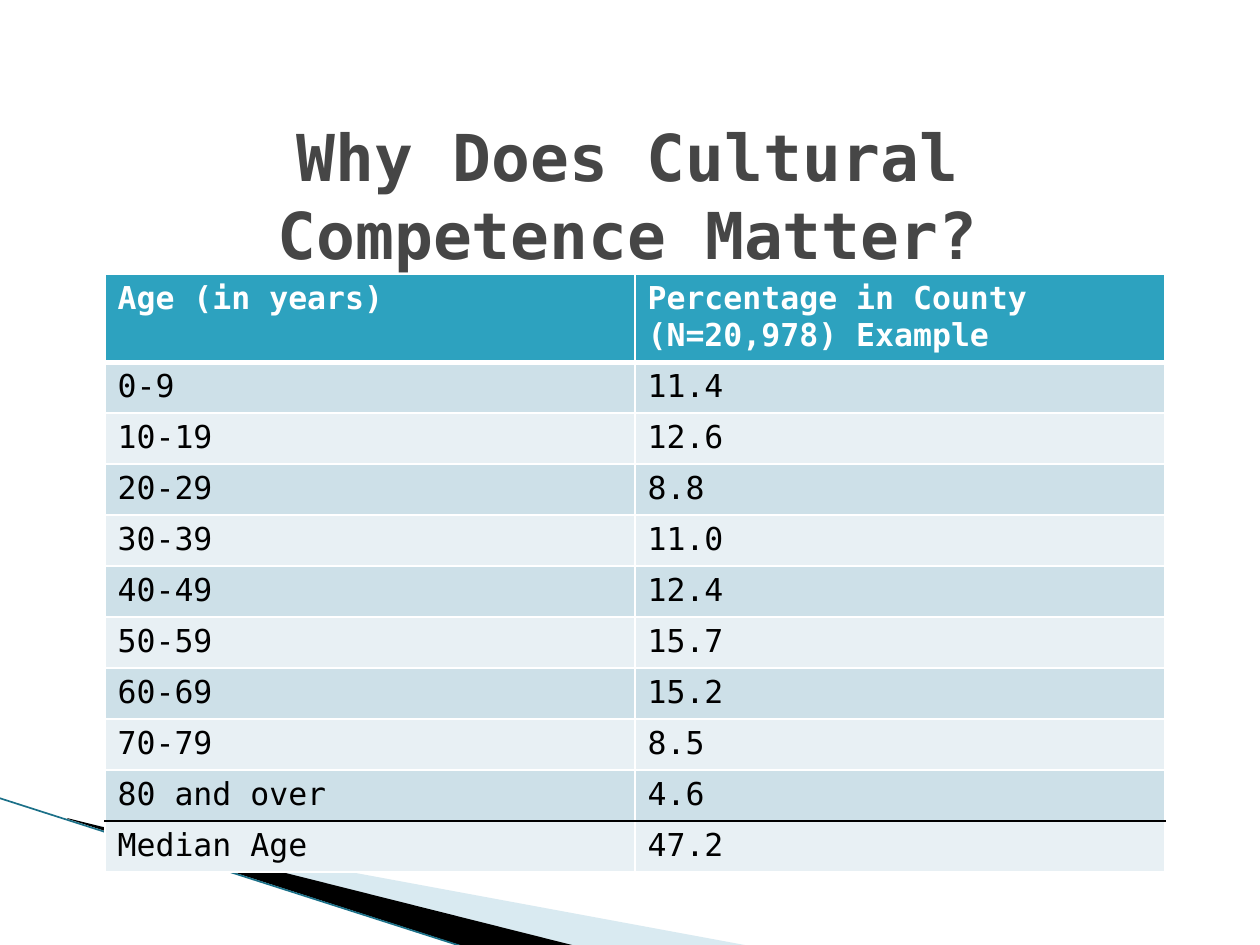
from dataclasses import dataclass

from lxml import etree
from pptx import Presentation
from pptx import util as u
from pptx.dml.color import RGBColor
from pptx.enum import shapes, text
from pptx.oxml.ns import qn

PX = u.Inches(1) / 126


@dataclass(frozen=True)
class Theme:
    font: str = "DejaVu Sans Mono"
    title_size: float = 36.9
    table_size: float = 18
    title: str = "464646"
    header: str = "2DA2BF"
    bands: tuple = ("CDE0E8", "E8F0F4")
    white: str = "FFFFFF"
    black: str = "000000"
    tint: str = "A0CBDC"
    edge: str = "1B7088"


THEME = Theme()
ROWS = [
    ("Age (in years)", "Percentage in County (N=20,978) Example"),
    ("0-9", "11.4"),
    ("10-19", "12.6"),
    ("20-29", "8.8"),
    ("30-39", "11.0"),
    ("40-49", "12.4"),
    ("50-59", "15.7"),
    ("60-69", "15.2"),
    ("70-79", "8.5"),
    ("80 and over", "4.6"),
    ("Median Age", "47.2"),
]


def px(*lengths):
    """Turn px lengths into EMU."""
    return [u.Emu(round(length * PX)) for length in lengths]


def style(para, size, color, bold):
    """Format every run of a paragraph."""
    for span in para.runs:
        span.font.name = THEME.font
        span.font.size = u.Pt(size)
        span.font.bold = bold
        span.font.color.rgb = RGBColor.from_string(color)


def add_wedge(page, left, top, points, color, opacity=100):
    """Draw a filled outline from points relative to left and top."""
    corners = [(left + x, top + y) for x, y in points]
    builder = page.shapes.build_freeform(*corners[0], scale=PX)
    builder.add_line_segments(corners[1:], close=True)
    wedge = builder.convert_to_shape()
    wedge.shadow.inherit = False
    wedge.fill.solid()
    wedge.fill.fore_color.rgb = RGBColor.from_string(color)
    wedge.line.fill.background()
    if opacity < 100:
        tone = wedge.fill._xPr.find(qn("a:solidFill"))[0]
        etree.SubElement(tone, qn("a:alpha"), val=str(opacity * 1000))


def add_swoosh(page, left, top):
    """Draw the corner decoration from its top left point."""
    add_wedge(page, left, top, [(70, 22), (751, 148), (576, 148), (70, 21)], THEME.tint, 40)
    add_wedge(page, left, top, [(68, 20), (577, 148), (470, 150), (69, 21)], THEME.black)
    edge = page.shapes.add_connector(
        shapes.MSO_CONNECTOR.STRAIGHT, *px(left, top, left + 468, top + 150))
    edge.line.color.rgb = RGBColor.from_string(THEME.edge)
    edge.line.width = u.Pt(0.95)
    etree.SubElement(edge._element.spPr, qn("a:effectLst"))


def add_title(page, left, top, width, height, words):
    """Write the centred slide title in its box."""
    box = page.shapes.add_textbox(*px(left, top, width, height))
    frame = box.text_frame
    frame.word_wrap = True
    frame.vertical_anchor = text.MSO_ANCHOR.MIDDLE
    frame.text = words
    para = frame.paragraphs[0]
    para.alignment = text.PP_ALIGN.CENTER
    style(para, THEME.title_size, THEME.title, True)


def set_borders(cell, top, bottom):
    """Give a cell white sides and the given (colour, points) top and bottom."""
    side = (THEME.white, 1)
    properties = cell._tc.get_or_add_tcPr()
    for tag, (color, points) in zip(("lnL", "lnR", "lnT", "lnB"), (side, side, top, bottom)):
        line = etree.SubElement(properties, qn(f"a:{tag}"), w=str(u.Pt(points)))
        fill = etree.SubElement(line, qn("a:solidFill"))
        etree.SubElement(fill, qn("a:srgbClr"), val=color)


def add_age_table(page, left, top, width, header_height, row_height):
    """Build the age table with a header, bands and a rule above the median."""
    last = len(ROWS) - 1
    frame = page.shapes.add_table(
        len(ROWS), 2, *px(left, top, width, header_height + last * row_height))
    table = frame.table
    rules = [(THEME.white, 1)] * (len(ROWS) + 1)
    rules[1] = (THEME.white, 3)
    rules[last] = (THEME.black, 1)
    for index, values in enumerate(ROWS):
        header = index == 0
        table.rows[index].height = px(row_height if index else header_height)[0]
        band = THEME.header if header else THEME.bands[(index - 1) % 2]
        for cell, value in zip(table.rows[index].cells, values):
            set_borders(cell, rules[index], rules[index + 1])
            cell.fill.solid()
            cell.fill.fore_color.rgb = RGBColor.from_string(band)
            cell.text_frame.text = value
            color = THEME.white if header else THEME.black
            style(cell.text_frame.paragraphs[0], THEME.table_size, color, header)


def main():
    """Build and save the deck."""
    deck = Presentation()
    deck.slide_width, deck.slide_height = px(1260, 945)
    page = deck.slides.add_slide(deck.slide_layouts[6])
    add_swoosh(page, -1, 798)
    add_title(page, 144, 116, 968, 157, "Why Does Cultural Competence Matter?")
    add_age_table(page, 105, 274, 1060, 84, 51)
    deck.save("out.pptx")


if __name__ == "__main__":
    main()
